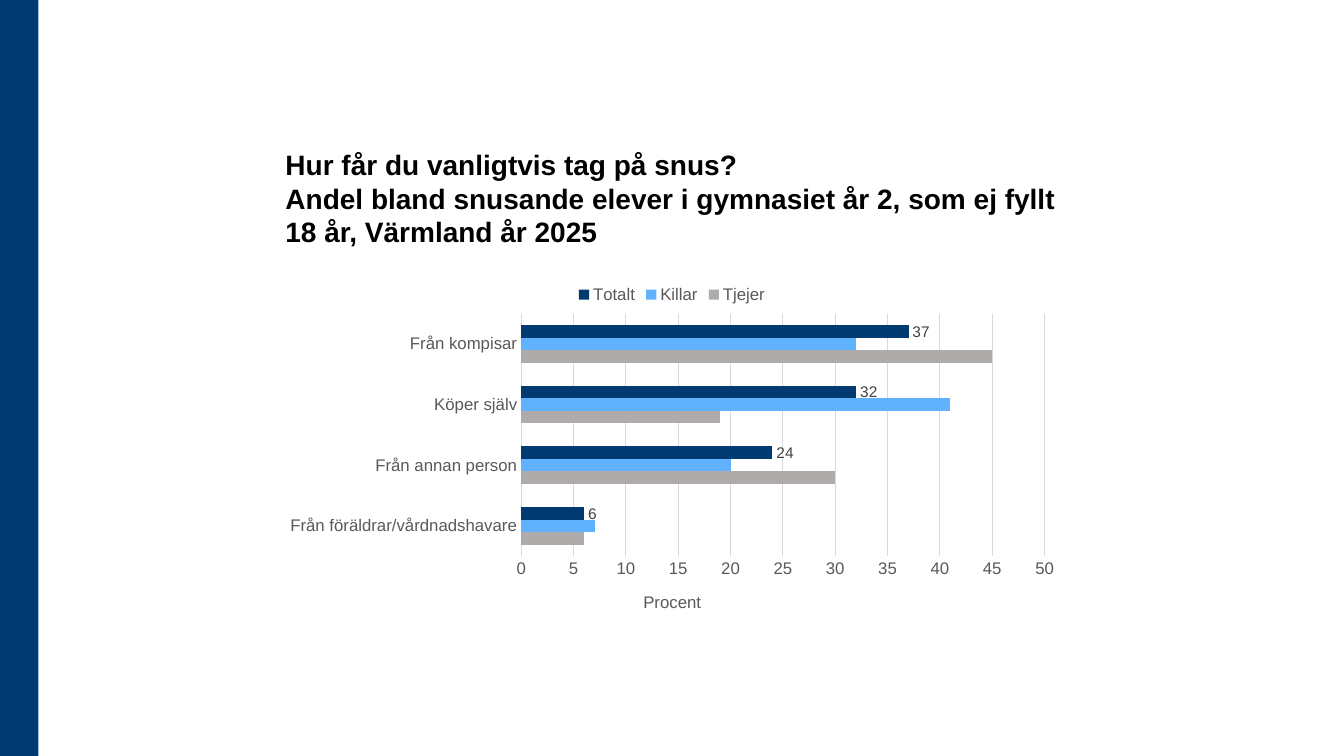
from lxml import etree
from pptx import Presentation
from pptx.chart.data import CategoryChartData
from pptx.dml.color import RGBColor
from pptx.enum.chart import XL_CHART_TYPE as ChartType, XL_LABEL_POSITION as LabelPosition
from pptx.enum.chart import XL_LEGEND_POSITION as LegendPosition, XL_TICK_MARK as TickMark
from pptx.enum.shapes import MSO_SHAPE as Shape
from pptx.enum.text import MSO_ANCHOR as Anchor
from pptx.oxml.ns import qn
from pptx.util import Inches, Pt

WIDTH, HEIGHT = Inches(13.33), Inches(7.5)
CONTENT_LEFT, CONTENT_WIDTH = 0.205, 0.59
FONT = "Arial"
COLORS = {
    "navy": "003A70",
    "blue": "60B2FF",
    "gray": "AFABAB",
    "grid": "D9D9D9",
    "axis": "595959",
    "label": "404040",
    "title": "000000",
}
TITLE = (
    "Hur får du vanligtvis tag på snus?\v"
    "Andel bland snusande elever i gymnasiet år 2, som ej fyllt 18 år, Värmland år 2025"
)
CATEGORIES = ["Från föräldrar/vårdnadshavare", "Från annan person", "Köper själv", "Från kompisar"]
SERIES = [
    ("Tjejer", "gray", (6, 30, 19, 45)),
    ("Killar", "blue", (7, 20, 41, 32)),
    ("Totalt", "navy", (6, 24, 32, 37)),
]


def box(left, top, width, height):
    """Turn shares of the slide into a position and size."""
    return int(left * WIDTH), int(top * HEIGHT), int(width * WIDTH), int(height * HEIGHT)


def color(name):
    """Look up a named colour."""
    return RGBColor.from_string(COLORS[name])


def style_font(font, size, color_name, bold=False):
    """Set typeface, size, colour and weight."""
    font.name, font.size, font.bold = FONT, Pt(size), bold
    font.color.rgb = color(color_name)


def style_line(line, color_name):
    """Draw a thin line in a named colour."""
    line.color.rgb = color(color_name)
    line.width = Pt(0.75)


def set_layout(parent, **shares):
    """Place a chart part by shares of the chart's size."""
    for old_layout in parent.findall(qn("c:layout")):
        parent.remove(old_layout)
    layout = etree.Element(qn("c:layout"))
    manual = etree.SubElement(layout, qn("c:manualLayout"))
    settings = {"xMode": "edge", "yMode": "edge", **shares}
    if "w" in shares:
        settings = {"layoutTarget": "inner", **settings}
    for tag, value in settings.items():
        etree.SubElement(manual, qn(f"c:{tag}")).set("val", str(value))
    text = parent.find(qn("c:tx"))
    if text is None:
        parent.insert(0, layout)
    else:
        text.addnext(layout)


def add_side_band(slide):
    """Add the full-height band on the left edge."""
    band = slide.shapes.add_shape(Shape.RECTANGLE, *box(0, 0, 0.0285, 1))
    band.shadow.inherit = False
    band.fill.solid()
    band.fill.fore_color.rgb = color("navy")
    band.line.fill.background()


def add_title(slide):
    """Add the bottom-anchored heading."""
    frame = slide.shapes.add_textbox(*box(CONTENT_LEFT, 0.141, CONTENT_WIDTH, 0.194)).text_frame
    frame.word_wrap = True
    frame.vertical_anchor = Anchor.BOTTOM
    paragraph = frame.paragraphs[0]
    paragraph.text = TITLE
    style_font(paragraph.font, 20, "title", bold=True)


def style_axes(chart):
    """Style both axes, the gridlines and the value title."""
    for axis in (chart.category_axis, chart.value_axis):
        axis.major_tick_mark = axis.minor_tick_mark = TickMark.NONE
        style_font(axis.tick_labels.font, 12, "axis")
    style_line(chart.category_axis.format.line, "grid")
    values = chart.value_axis
    values.minimum_scale, values.maximum_scale, values.major_unit = 0, 50, 5
    values.format.line.fill.background()
    style_line(values.major_gridlines.format.line, "grid")
    values.tick_labels.number_format = "0"
    values.tick_labels.number_format_is_linked = False
    paragraph = values.axis_title.text_frame.paragraphs[0]
    paragraph.text = "Procent"
    style_font(paragraph.font, 12, "axis")
    set_layout(values.axis_title._element, x=0.46, y=0.88)


def style_series(plot):
    """Colour the bars and label the total."""
    plot.gap_width, plot.overlap, plot.vary_by_categories = 182, 0, False
    for series, (_, color_name, _) in zip(plot.series, SERIES):
        series.format.fill.solid()
        series.format.fill.fore_color.rgb = color(color_name)
        series.invert_if_negative = False
    labels = plot.series[-1].data_labels
    labels.show_value = True
    labels.position = LabelPosition.OUTSIDE_END
    labels.number_format, labels.number_format_is_linked = "0", False
    style_font(labels.font, 11, "label")


def add_bar_chart(slide):
    """Add the clustered bar chart with its legend on top."""
    data = CategoryChartData(number_format="0")
    data.categories = CATEGORIES
    for name, _, values in SERIES:
        data.add_series(name, values)
    position = box(CONTENT_LEFT, 0.363, CONTENT_WIDTH, 0.472)
    chart = slide.shapes.add_chart(ChartType.BAR_CLUSTERED, *position, data).chart
    style_font(chart.font, 12, "title")
    chart.has_title = False
    chart.has_legend = True
    chart.legend.position = LegendPosition.TOP
    chart.legend.include_in_layout = False
    style_font(chart.legend.font, 12, "axis")
    style_axes(chart)
    style_series(chart.plots[0])
    set_layout(chart._chartSpace.chart.plotArea, x=0.31, y=0.11, w=0.66, h=0.68)


def main():
    """Build and save the slide."""
    presentation = Presentation()
    presentation.slide_width, presentation.slide_height = WIDTH, HEIGHT
    slide = presentation.slides.add_slide(presentation.slide_layouts[6])
    add_side_band(slide)
    add_title(slide)
    add_bar_chart(slide)
    presentation.save("out.pptx")


if __name__ == "__main__":
    main()
